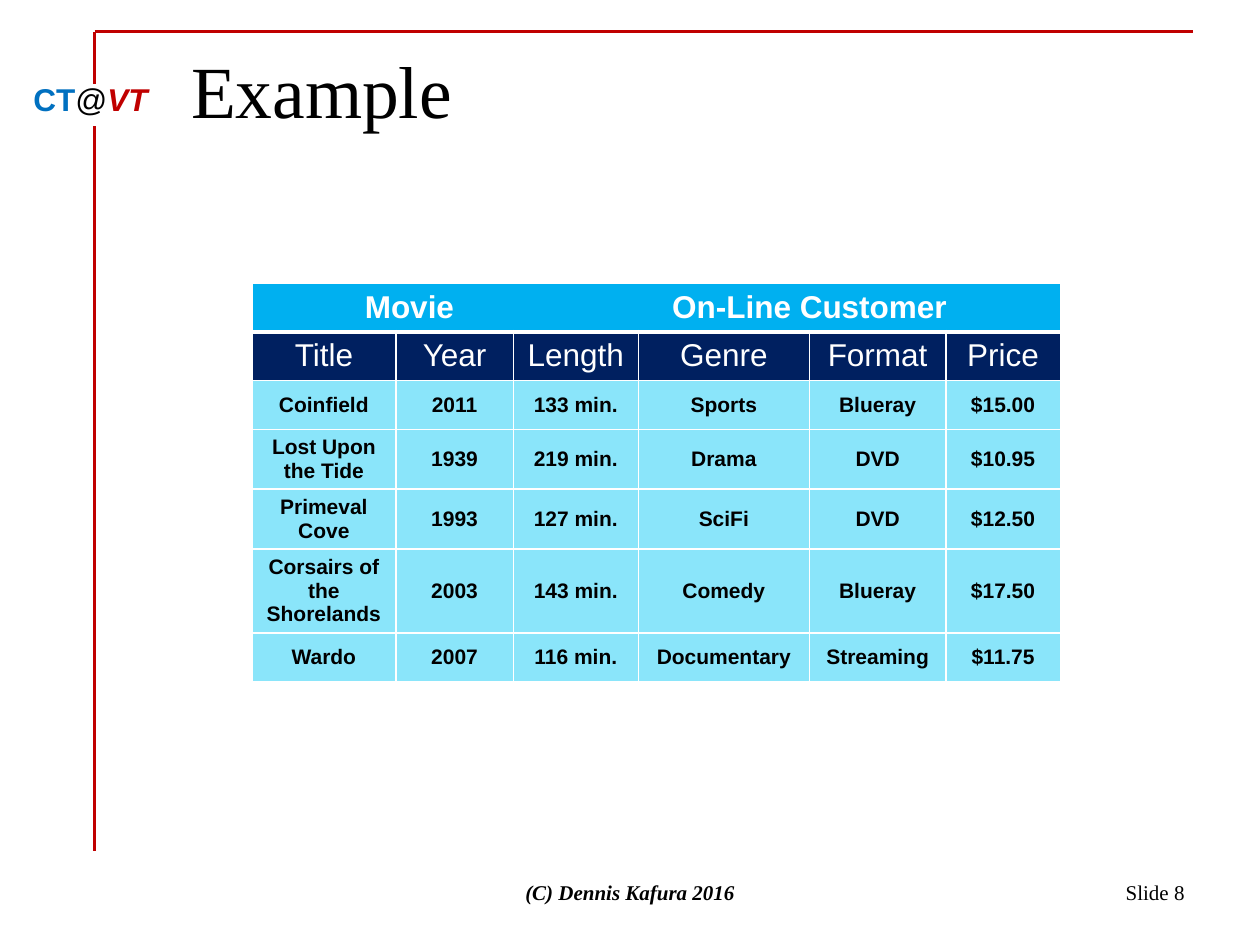
"""Build the Example slide: a framed page with a movie table."""
from typing import NamedTuple

from lxml import etree
from pptx import Presentation
from pptx.dml.color import RGBColor
from pptx.enum.shapes import MSO_CONNECTOR
from pptx.enum.text import MSO_ANCHOR, MSO_AUTO_SIZE, PP_ALIGN
from pptx.oxml.ns import qn
from pptx.util import Inches, Pt

STRAIGHT = MSO_CONNECTOR.STRAIGHT
TOP, MIDDLE, BOTTOM = MSO_ANCHOR.TOP, MSO_ANCHOR.MIDDLE, MSO_ANCHOR.BOTTOM
LEFT, CENTER, RIGHT = PP_ALIGN.LEFT, PP_ALIGN.CENTER, PP_ALIGN.RIGHT
TITLE_ONLY = 5
UNITS_PER_INCH = 12
RED, BLACK, WHITE = "C00000", "000000", "FFFFFF"
SERIF, SANS = "Times New Roman", "Arial"


class Box(NamedTuple):
    """A rectangle in grid units."""
    left: float
    top: float
    width: float
    height: float


class Rule(NamedTuple):
    """A frame line in grid units with its weight in points."""
    x1: float
    y1: float
    x2: float
    y2: float
    weight: float


class Run(NamedTuple):
    """Text with its font format."""
    text: str
    fmt: dict


class Label(NamedTuple):
    """A text box with its runs and placement."""
    box: Box
    runs: list
    align: PP_ALIGN
    anchor: MSO_ANCHOR
    wrap: bool = True


class RowStyle(NamedTuple):
    """The look of a table row."""
    fill: str
    fmt: dict
    anchor: MSO_ANCHOR


def font(name: str, size: float, color: str = BLACK, bold: bool = False,
         italic: bool = False) -> dict:
    """Return a dict of font format values."""
    return {"name": name, "size": Pt(size), "bold": bold, "italic": italic, "color": color}


RULES = [
    Rule(9, 3, 113.6, 3, 2),
    Rule(9, 3, 9, 8, 1.75),
    Rule(9, 12, 9, 81, 1.75),
]
LABELS = [
    Label(Box(2, 7, 13.4, 4.8),
          [Run("CT", font(SANS, 18, "0070C0", True)),
           Run("@", font(SANS, 18)),
           Run("VT", font(SANS, 18, RED, True, True))], LEFT, TOP, False),
    Label(Box(86, 82, 28, 6), [Run("Slide 8", font(SERIF, 12))], RIGHT, MIDDLE),
    Label(Box(41, 82, 38, 6),
          [Run("(C) Dennis Kafura 2016", font(SERIF, 12, BLACK, True, True))], CENTER, MIDDLE),
]
TITLE_BOX = Box(17, 3.6, 97, 9.4)
TITLE_INSET = 0.3
TABLE_ORIGIN = (24, 27)
COLUMNS = [13.7, 11.2, 11.9, 16.3, 13, 10.9]
ROWS = [4.63, 4.63, 4.63, 5.7, 5.7, 8, 4.63]
GROUP_TABS = (13.8, 51.9)
GROUP_BORDER = 3
GROUPS = RowStyle("00B0F0", font(SANS, 18, WHITE, True), TOP)
HEADINGS = RowStyle("002060", font(SANS, 18, WHITE), TOP)
MOVIE = RowStyle("8AE5FA", font(SANS, 12, BLACK, True), MIDDLE)
CELLS = [
    ["Title", "Year", "Length", "Genre", "Format", "Price"],
    ["Coinfield", "2011", "133 min.", "Sports", "Blueray", "$15.00"],
    ["Lost Upon the Tide", "1939", "219 min.", "Drama", "DVD", "$10.95"],
    ["Primeval Cove", "1993", "127 min.", "SciFi", "DVD", "$12.50"],
    ["Corsairs of the Shorelands", "2003", "143 min.", "Comedy", "Blueray", "$17.50"],
    ["Wardo", "2007", "116 min.", "Documentary", "Streaming", "$11.75"],
]


def grid(units: float) -> int:
    """Convert grid units to a length."""
    return Inches(units / UNITS_PER_INCH)


def rgb(value: str) -> RGBColor:
    """Convert a hex string to a colour."""
    return RGBColor.from_string(value)


def add_run(p, run: Run) -> None:
    """Append a formatted run to a paragraph."""
    r = p.add_run()
    r.text = run.text
    for key, value in run.fmt.items():
        if key == "color":
            r.font.color.rgb = rgb(value)
        else:
            setattr(r.font, key, value)


def draw_rule(s, rule: Rule) -> None:
    """Draw one line of the frame."""
    line = s.shapes.add_connector(STRAIGHT, *map(grid, rule[:4]))
    line.line.color.rgb = rgb(RED)
    line.line.width = Pt(rule.weight)
    etree.SubElement(line._element.spPr, qn("a:effectLst"))


def draw_label(s, label: Label) -> None:
    """Draw one text box."""
    tf = s.shapes.add_textbox(*map(grid, label.box)).text_frame
    tf.word_wrap = label.wrap
    tf.vertical_anchor = label.anchor
    p = tf.paragraphs[0]
    p.alignment = label.align
    for run in label.runs:
        add_run(p, run)


def draw_title(s, text: str) -> None:
    """Move and format the title placeholder."""
    sp = s.shapes.title
    for key, value in TITLE_BOX._asdict().items():
        setattr(sp, key, grid(value))
    tf = sp.text_frame
    tf.auto_size = MSO_AUTO_SIZE.NONE
    tf.vertical_anchor = BOTTOM
    tf.margin_bottom = grid(TITLE_INSET)
    p = tf.paragraphs[0]
    p.alignment = LEFT
    add_run(p, Run(text, font(SERIF, 42)))


def fill_cell(cell, text: str, style: RowStyle, tabs: tuple = ()) -> None:
    """Fill a cell with centred text, or with text centred on tab stops."""
    cell.fill.solid()
    cell.fill.fore_color.rgb = rgb(style.fill)
    cell.vertical_anchor = style.anchor
    p = cell.text_frame.paragraphs[0]
    p.alignment = LEFT if tabs else CENTER
    if tabs:
        stops = etree.SubElement(p._p.get_or_add_pPr(), qn("a:tabLst"))
        for tab in tabs:
            etree.SubElement(stops, qn("a:tab"), pos=str(grid(tab)), algn="ctr")
    add_run(p, Run(text, style.fmt))


def underline_cell(cell, weight: float) -> None:
    """Give a cell a white bottom border."""
    border = etree.Element(qn("a:lnB"), w=str(Pt(weight)))
    fill = etree.SubElement(border, qn("a:solidFill"))
    etree.SubElement(fill, qn("a:srgbClr"), val=WHITE)
    cell._tc.get_or_add_tcPr().insert(0, border)


def draw_table(s) -> None:
    """Draw the movie table under its merged group row."""
    box = Box(*TABLE_ORIGIN, sum(COLUMNS), sum(ROWS))
    table = s.shapes.add_table(len(ROWS), len(COLUMNS), *map(grid, box)).table
    for column, width in zip(table.columns, COLUMNS):
        column.width = grid(width)
    for row, height in zip(table.rows, ROWS):
        row.height = grid(height)
    table.cell(0, 0).merge(table.cell(0, len(COLUMNS) - 1))
    fill_cell(table.cell(0, 0), "\tMovie\tOn-Line Customer", GROUPS, GROUP_TABS)
    for cell in table.rows[0].cells:
        underline_cell(cell, GROUP_BORDER)
    for i, texts in enumerate(CELLS, 1):
        for j, text in enumerate(texts):
            fill_cell(table.cell(i, j), text, HEADINGS if i == 1 else MOVIE)


def main() -> None:
    """Build and save the slide."""
    prs = Presentation()
    prs.slide_width, prs.slide_height = grid(120), grid(90)
    s = prs.slides.add_slide(prs.slide_layouts[TITLE_ONLY])
    for rule in RULES:
        draw_rule(s, rule)
    draw_title(s, "Example")
    draw_table(s)
    for label in LABELS:
        draw_label(s, label)
    prs.save("out.pptx")


if __name__ == "__main__":
    main()
